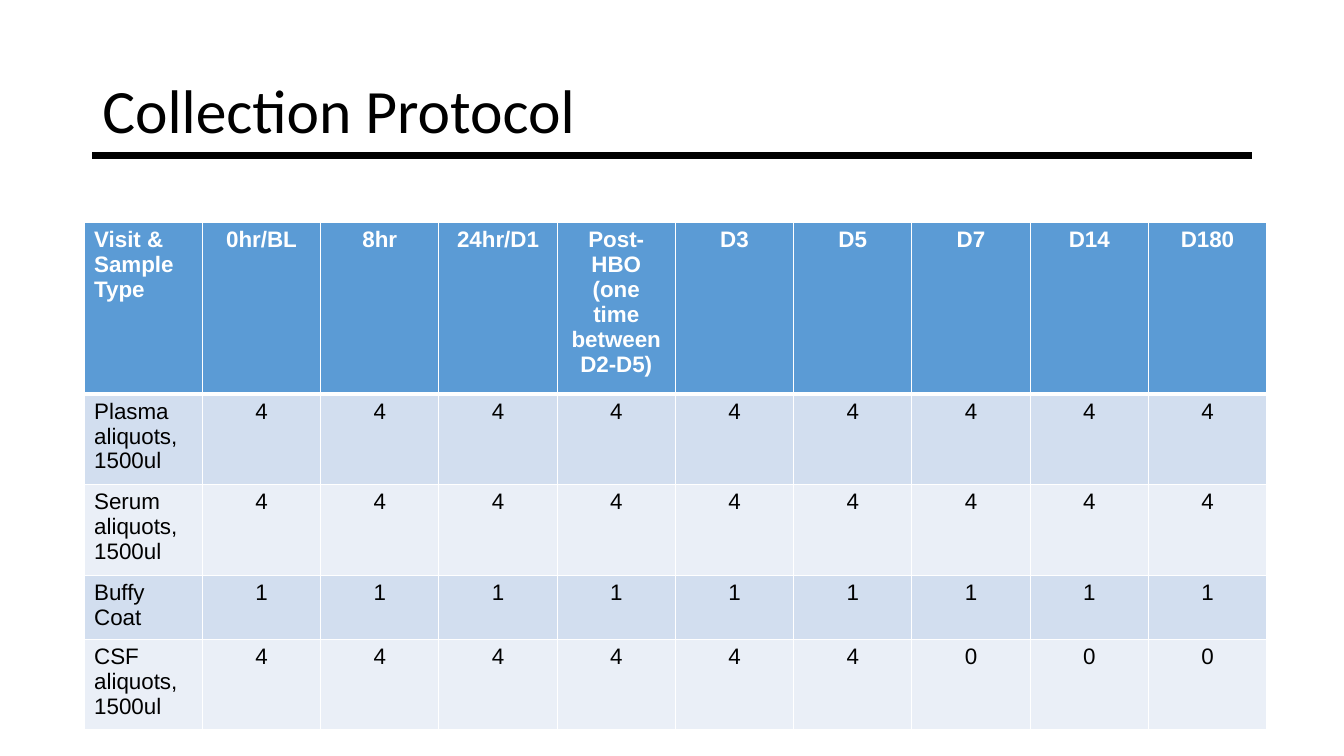
import pptx
import pptx.dml.color
import pptx.enum.shapes
import pptx.enum.text
import pptx.oxml
import pptx.oxml.ns
import pptx.util
from pptx.util import Cm

BLACK, WHITE = "000000", "FFFFFF"
HEADER_BLUE = "5B9BD5"
BAND_FILLS = ["D2DEEF", "EAEFF7"]
VISITS = ["0hr/BL", "8hr", "24hr/D1", "Post-HBO (one time between D2-D5)",
          "D3", "D5", "D7", "D14", "D180"]
SAMPLES = [
    ("Plasma aliquots, 1500ul", [4] * 9),
    ("Serum aliquots, 1500ul", [4] * 9),
    ("Buffy Coat", [1] * 9),
    ("CSF aliquots, 1500ul", [4] * 6 + [0] * 3),
]


def colour(hex_string):
    """Turn a hex string into a colour."""
    return pptx.dml.color.RGBColor.from_string(hex_string)


def style_font(font, name, size, hex_string, bold=False):
    """Set the face, size, colour and weight of a font."""
    font.name = name
    font.size = pptx.util.Pt(size)
    font.bold = bold
    font.color.rgb = colour(hex_string)


def add_title(slide, wording):
    """Add the slide title."""
    title = slide.shapes.add_textbox(Cm(2.33), Cm(1.02), Cm(29.21), Cm(3.68))
    frame = title.text_frame
    frame.word_wrap = True
    frame.vertical_anchor = pptx.enum.text.MSO_ANCHOR.MIDDLE
    frame.margin_top = frame.margin_bottom = Cm(0.25)
    frame.text = wording
    paragraph = frame.paragraphs[0]
    paragraph.line_spacing = 0.9
    style_font(paragraph.runs[0].font, "Calibri", 44, BLACK)


def add_title_rule(slide):
    """Add the heavy line under the title."""
    rule = slide.shapes.add_connector(
        pptx.enum.shapes.MSO_CONNECTOR.STRAIGHT,
        Cm(2.33), Cm(3.92), Cm(31.54), Cm(3.92))
    rule.line.color.rgb = colour(BLACK)
    rule.line.width = pptx.util.Pt(4.5)
    rule._element.spPr.append(pptx.oxml.parse_xml(
        f'<a:effectLst {pptx.oxml.ns.nsdecls("a")}/>'))


def set_borders(cell, top, bottom):
    """Draw white cell borders with the given top and bottom widths in points."""
    properties = cell._tc.get_or_add_tcPr()
    for side, width in (("L", 1), ("R", 1), ("T", top), ("B", bottom)):
        properties.append(pptx.oxml.parse_xml(
            f'<a:ln{side} {pptx.oxml.ns.nsdecls("a")} w="{pptx.util.Pt(width)}">'
            f'<a:solidFill><a:srgbClr val="{WHITE}"/></a:solidFill></a:ln{side}>'))


def fill_cell(cell, wording, row, column):
    """Write and style one cell by its place in the table."""
    is_header = row == 0
    set_borders(cell, 3 if row == 1 else 1, 3 if is_header else 1)
    cell.fill.solid()
    cell.fill.fore_color.rgb = colour(
        HEADER_BLUE if is_header else BAND_FILLS[(row - 1) % 2])
    cell.text_frame.text = str(wording)
    paragraph = cell.text_frame.paragraphs[0]
    if column > 0:
        paragraph.alignment = pptx.enum.text.PP_ALIGN.CENTER
    style_font(paragraph.runs[0].font, "Arial", 16,
               WHITE if is_header else BLACK, is_header)


def add_schedule(slide):
    """Add the table of samples collected at each visit."""
    rows = [["Visit & Sample Type", *VISITS]]
    rows += [[sample, *counts] for sample, counts in SAMPLES]
    schedule = slide.shapes.add_table(
        len(rows), len(rows[0]), Cm(2.12), Cm(5.61), Cm(29.8), Cm(5.2)).table
    for row, wordings in enumerate(rows):
        for column, wording in enumerate(wordings):
            fill_cell(schedule.cell(row, column), wording, row, column)


def main():
    """Build and save the collection protocol slide."""
    presentation = pptx.Presentation()
    presentation.slide_width = Cm(33.87)
    presentation.slide_height = Cm(19.05)
    slide = presentation.slides.add_slide(presentation.slide_layouts[6])
    add_title_rule(slide)
    add_title(slide, "Collection Protocol")
    add_schedule(slide)
    presentation.save("out.pptx")


if __name__ == "__main__":
    main()
